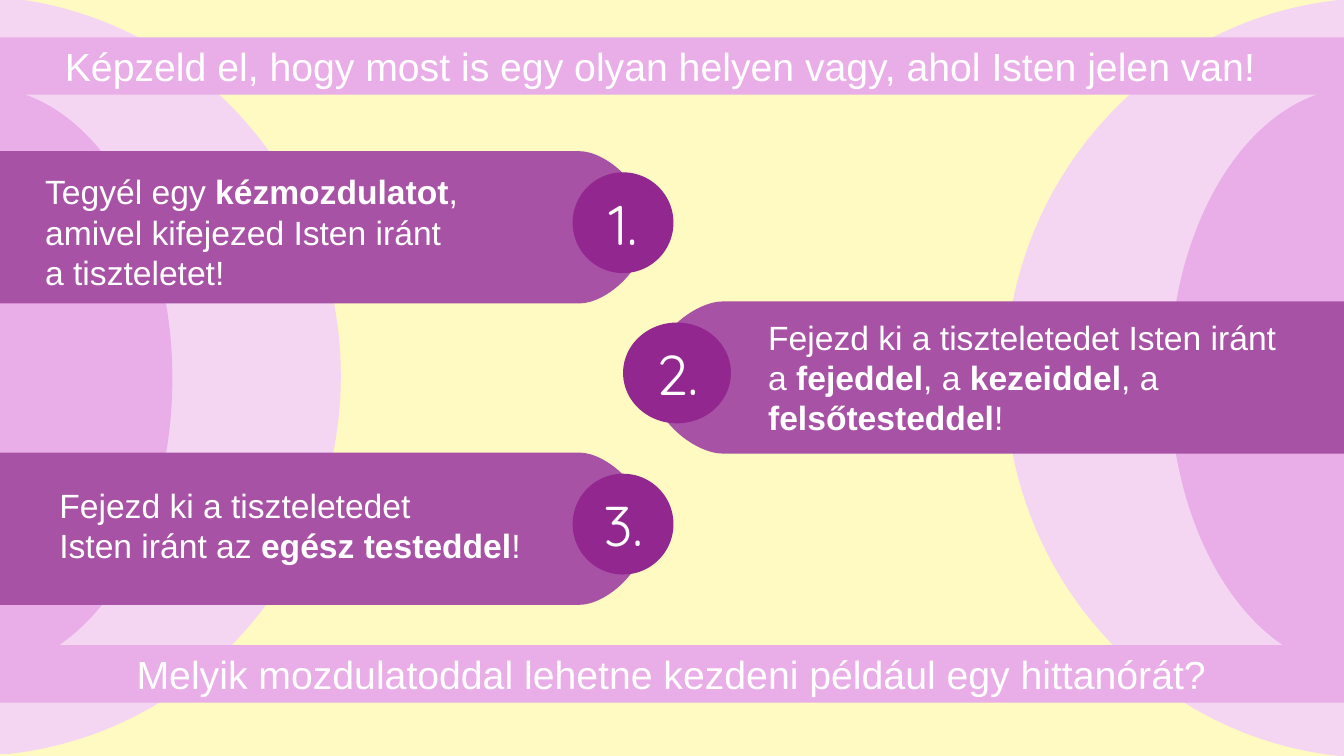
"""Builds a slide with three numbered prayer gestures between two banners."""
from lxml import etree
from pptx import Presentation
from pptx import util as u
from pptx.dml.color import RGBColor
from pptx.enum import shapes, text
from pptx.oxml import ns

CREAM, PALE, PINK = "FFFAC2", "F4D6F3", "E9ADE7"
PURPLE, DARK, WHITE = "A852A5", "92278F", "FFFFFF"

# edge, shoulder, bend, tip, top, height, near, far, colour
SIDE_LOBES = [
    (0, 0.08, 1.94, 3.38, -0.02, 7.5, 0.2, 1.8, PALE),
    (-0.02, 0.02, 0.97, 1.71, 0.88, 5.75, 0.15, 1.38, PINK),
    (13.36, 13.28, 11.42, 9.97, 0, 7.5, 0.2, 1.8, PALE),
    (13.33, 13.29, 12.34, 11.6, 0.88, 5.75, 0.15, 1.38, PINK),
]
# top, right inset, wording
BANNERS = [
    (0.37, 0.32, "Képzeld el, hogy most is egy olyan helyen vagy, ahol Isten jelen van!"),
    (6.4, 0.1, "Melyik mozdulatoddal lehetne kezdeni például egy hittanórát?"),
]
LEFT_BAND = (-0.02, 5.75, 6, 6.42)
RIGHT_BAND = (13.33, 7.17, 6.9, 6.45)
# number, band, band top, circle left and width, text box, lines of (wording, bold)
GESTURES = [
    ("2.", RIGHT_BAND, 2.99, (6.18, 1.07), (7.52, 3.09, 5.42, 1.31), [
        [("Fejezd ki a tiszteletedet Isten iránt a ", False), ("fejeddel", True),
         (", a ", False), ("kezeiddel", True), (", a", False)],
        [("felsőtesteddel", True), ("!", False)]]),
    ("3.", LEFT_BAND, 4.49, (5.68, 1), (0.49, 4.76, 4.82, 0.91), [
        [("Fejezd ki a tiszteletedet", False)],
        [("Isten iránt az ", False), ("egész testeddel", True), ("!", False)]]),
    ("1.", LEFT_BAND, 1.5, (5.68, 1), (0.35, 1.65, 4.43, 1.31), [
        [("Tegyél egy", False), (" kézmozdulatot", True), (",", False)],
        [("amivel kifejezed Isten iránt", False)],
        [("a tiszteletet!", False)]]),
]


def colour(value):
    return RGBColor.from_string(value)


def paint(shape, fill):
    shape.shadow.inherit = False
    shape.fill.solid()
    shape.fill.fore_color.rgb = colour(fill)
    shape.line.fill.background()


def style(run, size, name="Arial", bold=False):
    run.font.size = u.Pt(size)
    run.font.name = name
    run.font.bold = bold
    run.font.color.rgb = colour(WHITE)


def bend_segments(shape, first):
    """Turns three straight segments, counted from first, into one curve."""
    segments = list(shape._element.iter(ns.qn("a:lnTo")))[first:first + 3]
    bezier = etree.Element(ns.qn("a:cubicBezTo"))
    segments[0].addprevious(bezier)
    for segment in segments:
        bezier.append(segment[0])
        segment.getparent().remove(segment)


def add_lobe(parts, edge, shoulder, bend, tip, top, height, near, far, fill):
    bottom, middle = top + height, top + height / 2
    outline = [(shoulder, top),
               (bend, top + near), (tip, top + far), (tip, middle),
               (tip, bottom - far), (bend, bottom - near), (shoulder, bottom),
               (edge, bottom)]
    builder = parts.build_freeform(u.Inches(edge), u.Inches(top))
    builder.add_line_segments([(u.Inches(x), u.Inches(y)) for x, y in outline], close=True)
    lobe = builder.convert_to_shape()
    for first in (4, 1):
        bend_segments(lobe, first)
    paint(lobe, fill)


def add_label(parts, kind, box, fill, wording, size, font):
    shape = parts.add_shape(kind, *map(u.Inches, box))
    paint(shape, fill)
    frame = shape.text_frame
    frame.text = wording
    frame.word_wrap = True
    frame.vertical_anchor = text.MSO_ANCHOR.MIDDLE
    frame.paragraphs[0].alignment = text.PP_ALIGN.CENTER
    style(frame.paragraphs[0].runs[0], size, font)
    return frame


def add_banner(parts, top, inset, wording):
    frame = add_label(parts, shapes.MSO_SHAPE.RECTANGLE, (-0.02, top, 13.35, 0.57),
                      PINK, wording, 28, "Arial")
    frame.vertical_anchor = text.MSO_ANCHOR.TOP
    frame.margin_right = u.Inches(inset)


def add_gesture(parts, number, band, top, circle, box, lines):
    add_lobe(parts, *band, top, 1.51, 0, 0.33, PURPLE)
    left, width = circle
    add_label(parts, shapes.MSO_SHAPE.OVAL, (left, top + 0.21, width, 1), DARK,
              number, 40, "Quicksand")
    frame = parts.add_textbox(*map(u.Inches, box)).text_frame
    frame.word_wrap = True
    for index, line in enumerate(lines):
        paragraph = frame.add_paragraph() if index else frame.paragraphs[0]
        for wording, bold in line:
            run = paragraph.add_run()
            run.text = wording
            style(run, 24, bold=bold)


def main():
    presentation = Presentation()
    presentation.slide_width = u.Inches(13.33)
    presentation.slide_height = u.Inches(7.5)
    slide = presentation.slides.add_slide(presentation.slide_layouts[6])
    slide.background.fill.solid()
    slide.background.fill.fore_color.rgb = colour(CREAM)
    for lobe in SIDE_LOBES:
        add_lobe(slide.shapes, *lobe)
    for banner in BANNERS:
        add_banner(slide.shapes, *banner)
    for gesture in GESTURES:
        add_gesture(slide.shapes.add_group_shape().shapes, *gesture)
    presentation.save("out.pptx")


if __name__ == "__main__":
    main()
